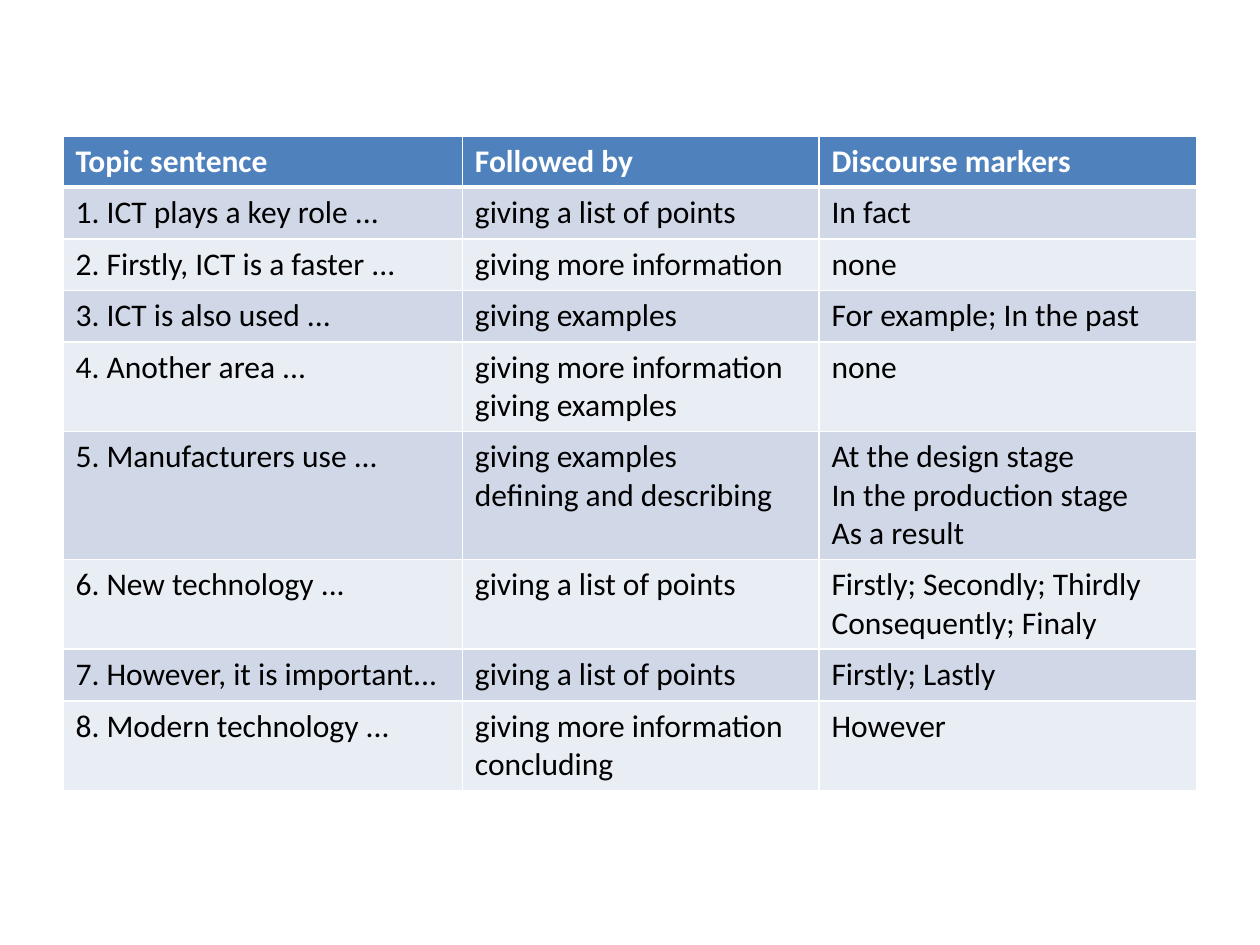
from lxml import etree
from pptx import Presentation
from pptx.dml.color import RGBColor
from pptx.oxml.ns import qn
from pptx.util import Inches, Pt

BLANK_LAYOUT = 6
COLORS = {
    "header": "4F81BD",
    "odd_row": "D0D8E8",
    "even_row": "E9EDF4",
    "border": "FFFFFF",
    "header_text": "FFFFFF",
    "body_text": "000000",
}
COLUMN_WIDTHS = [3.17, 2.83, 3]
HEADER_HEIGHT, ROW_HEIGHT = 0.32, 0.41
THIN, THICK = 1, 3

ROWS = [
    ("Topic sentence", "Followed by", "Discourse markers"),
    ("1. ICT plays a key role ...", "giving a list of points", "In fact"),
    ("2. Firstly, ICT is a faster ...", "giving more information", "none"),
    ("3. ICT is also used ...", "giving examples", "For example; In the past"),
    ("4. Another area ...", "giving more information\ngiving examples", "none"),
    ("5. Manufacturers use ...", "giving examples\ndefining and describing",
     "At the design stage\nIn the production stage\nAs a result"),
    ("6. New technology ...", "giving a list of points",
     "Firstly; Secondly; Thirdly\nConsequently; Finaly"),
    ("7. However, it is important...", "giving a list of points", "Firstly; Lastly"),
    ("8. Modern technology ...", "giving more information\nconcluding", "However"),
]


class SlideBuilder:
    def __init__(self, slide, font="Calibri", size=18):
        self.slide = slide
        self.font = font
        self.size = size

    def table(self, left, top, height, rows):
        frame = self.slide.shapes.add_table(
            len(rows), len(COLUMN_WIDTHS), Inches(left), Inches(top),
            Inches(sum(COLUMN_WIDTHS)), Inches(height))
        table = frame.table
        for column, width in zip(table.columns, COLUMN_WIDTHS):
            column.width = Inches(width)
        for index, texts in enumerate(rows):
            table.rows[index].height = Inches(ROW_HEIGHT if index else HEADER_HEIGHT)
            for column, text in enumerate(texts):
                self.cell(table.cell(index, column), text, index)
        frame.height = Inches(height)

    def cell(self, cell, text, row):
        is_header = row == 0
        self.borders(cell, top=THICK if row == 1 else THIN,
                     bottom=THICK if is_header else THIN)
        fill = "header" if is_header else "odd_row" if row % 2 else "even_row"
        cell.fill.solid()
        cell.fill.fore_color.rgb = RGBColor.from_string(COLORS[fill])
        cell.text = text
        text_color = COLORS["header_text" if is_header else "body_text"]
        for paragraph in cell.text_frame.paragraphs:
            font = paragraph.font
            font.name, font.size, font.bold = self.font, Pt(self.size), is_header
            font.color.rgb = RGBColor.from_string(text_color)

    def borders(self, cell, top, bottom):
        properties = cell._tc.get_or_add_tcPr()
        for side, width in (("L", THIN), ("R", THIN), ("T", top), ("B", bottom)):
            line = etree.SubElement(properties, qn(f"a:ln{side}"), w=str(Pt(width)))
            fill = etree.SubElement(line, qn("a:solidFill"))
            etree.SubElement(fill, qn("a:srgbClr"), val=COLORS["border"])


def main():
    presentation = Presentation()
    presentation.slide_width = Inches(10)
    presentation.slide_height = Inches(7.5)
    slide = presentation.slides.add_slide(presentation.slide_layouts[BLANK_LAYOUT])
    SlideBuilder(slide).table(0.5, 1.08, 5.12, ROWS)
    presentation.save("out.pptx")


if __name__ == "__main__":
    main()
